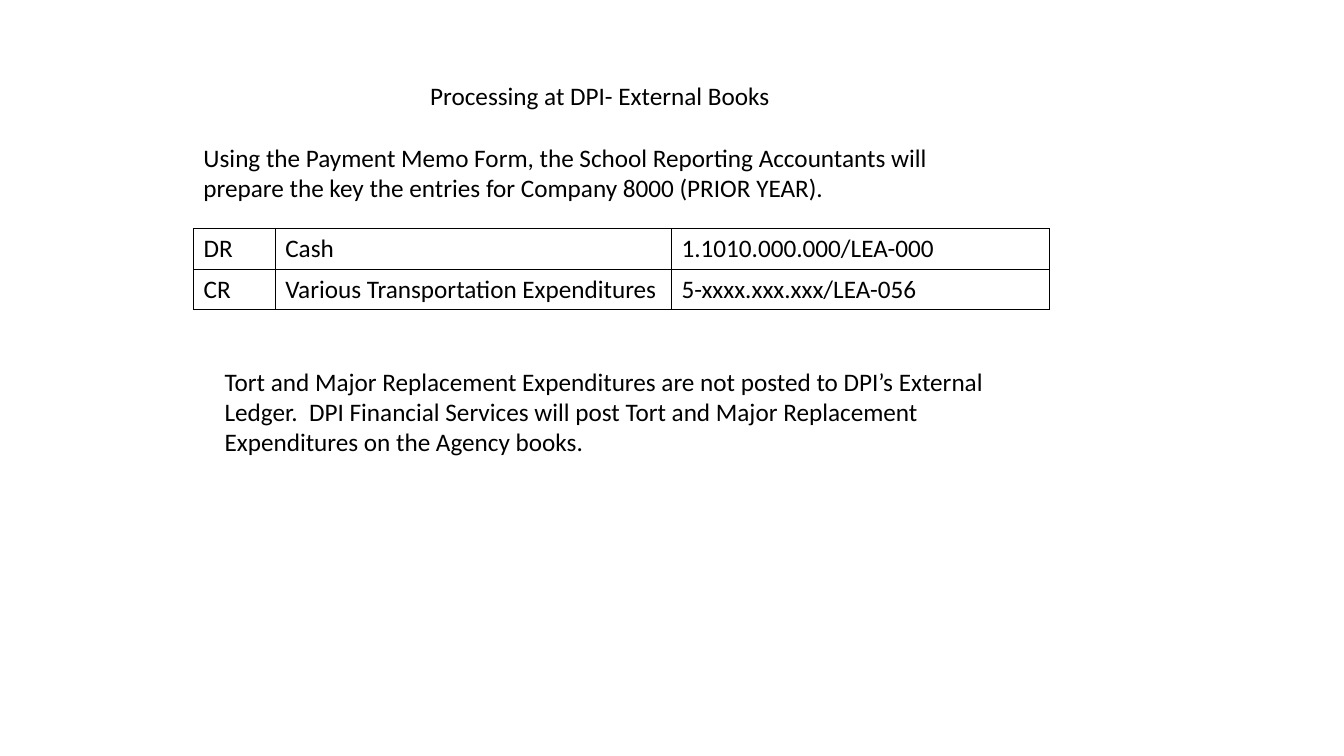
from lxml.etree import SubElement
from pptx import Presentation
from pptx.dml.color import RGBColor
from pptx.enum.text import MSO_ANCHOR, PP_ALIGN
from pptx.oxml.ns import qn
from pptx.util import Inches, Pt

BLACK = RGBColor(0x00, 0x00, 0x00)
FONT, SIZE = "Calibri", Pt(18)
BORDER_WIDTH = Pt(1)

# Content
HEADING = "Processing at DPI- External Books"
INSTRUCTION = ("Using the Payment Memo Form, the School Reporting Accountants will "
               "prepare the key the entries for Company 8000 (PRIOR YEAR).")
ENTRIES = [
    ("DR", "Cash", "1.1010.000.000/LEA-000"),
    ("CR", "Various Transportation Expenditures", "5-xxxx.xxx.xxx/LEA-056"),
]
LEDGER_NOTE = ("Tort and Major Replacement Expenditures are not posted to DPI’s External "
               "Ledger.  DPI Financial Services will post Tort and Major Replacement "
               "Expenditures on the Agency books.")

# Layout, in inches
LEFT, TEXT_WIDTH = 1.92, 8.06
COLUMN_WIDTHS = (0.81, 3.93, 3.75)
ROW_HEIGHT = 0.4


def write(frame, text, align=PP_ALIGN.LEFT):
    frame.text = text
    frame.word_wrap = True
    frame.vertical_anchor = MSO_ANCHOR.TOP
    paragraph = frame.paragraphs[0]
    paragraph.alignment = align
    font = paragraph.runs[0].font
    font.name, font.size, font.color.rgb = FONT, SIZE, BLACK


def add_text(slide, text, left, top, height):
    box = slide.shapes.add_textbox(
        Inches(left), Inches(top), Inches(TEXT_WIDTH), Inches(height))
    write(box.text_frame, text)


def add_borders(cell):
    properties = cell._tc.get_or_add_tcPr()
    for position, side in enumerate(("lnL", "lnR", "lnT", "lnB")):
        line = properties.makeelement(qn(f"a:{side}"), {"w": str(BORDER_WIDTH)})
        fill = SubElement(line, qn("a:solidFill"))
        SubElement(fill, qn("a:srgbClr"), val=str(BLACK))
        properties.insert(position, line)


def add_entries(slide):
    table = slide.shapes.add_table(
        len(ENTRIES), len(COLUMN_WIDTHS), Inches(LEFT), Inches(2.27),
        Inches(sum(COLUMN_WIDTHS)), Inches(ROW_HEIGHT * len(ENTRIES))).table
    table.first_row = table.horz_banding = False
    for column, width in zip(table.columns, COLUMN_WIDTHS):
        column.width = Inches(width)
    for r, entry in enumerate(ENTRIES):
        for c, text in enumerate(entry):
            cell = table.cell(r, c)
            write(cell.text_frame, text)
            cell.fill.background()
            add_borders(cell)


def main():
    deck = Presentation()
    deck.slide_width, deck.slide_height = Inches(13.33), Inches(7.5)
    slide = deck.slides.add_slide(deck.slide_layouts[5])

    # Heading
    title = slide.shapes.title
    title.left, title.top = Inches(LEFT), Inches(0.75)
    title.width, title.height = Inches(TEXT_WIDTH), Inches(0.4)
    write(title.text_frame, HEADING, PP_ALIGN.CENTER)

    # Instruction, journal entries and closing note
    add_text(slide, INSTRUCTION, LEFT, 1.36, 0.7)
    add_entries(slide)
    add_text(slide, LEDGER_NOTE, 2.13, 3.58, 1.01)

    deck.save("out.pptx")


if __name__ == "__main__":
    main()
